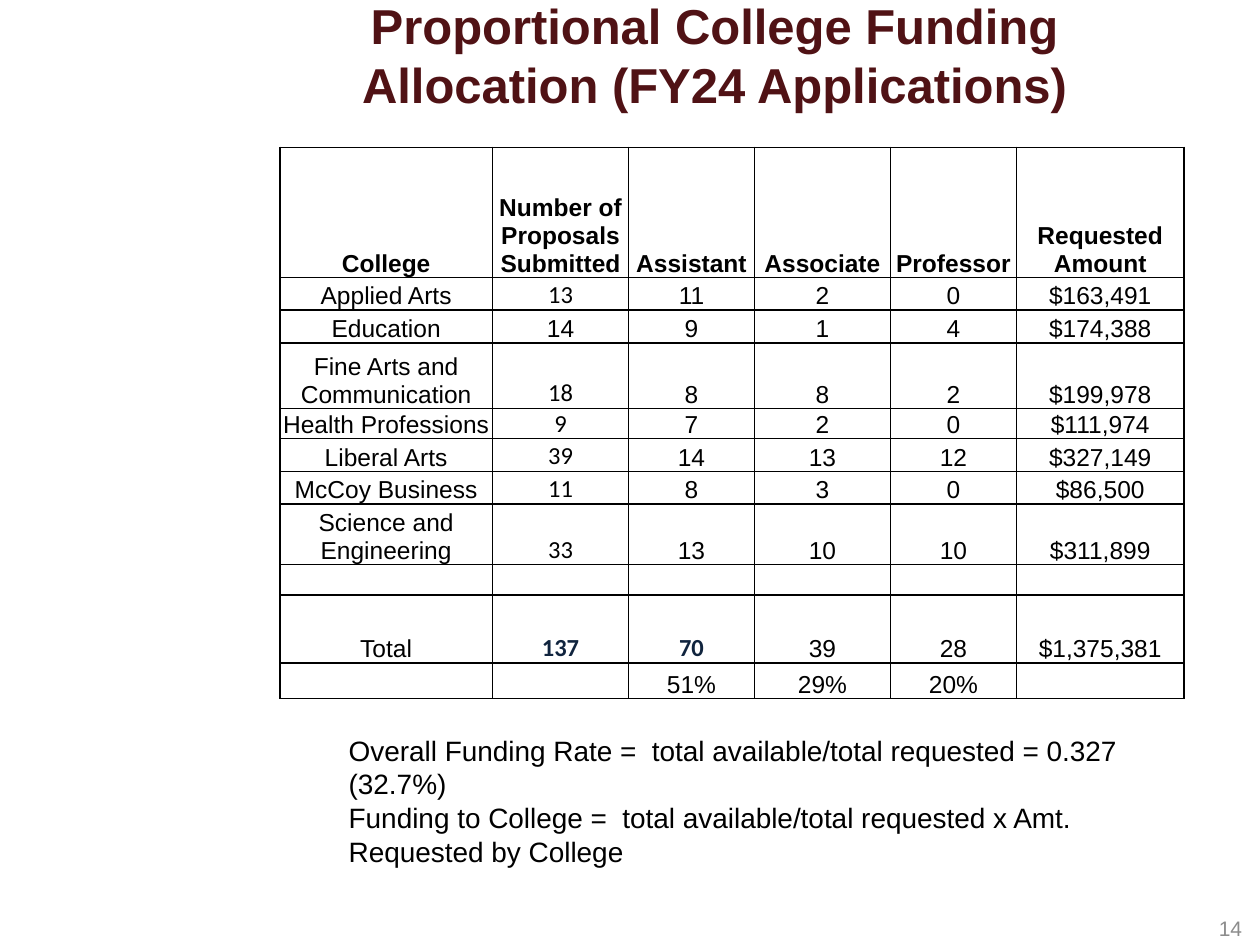
from dataclasses import dataclass

from lxml.etree import SubElement
from pptx import Presentation
from pptx.dml.color import RGBColor
from pptx.enum.text import MSO_ANCHOR as Anchor, PP_ALIGN as Align
from pptx.oxml.ns import qn
from pptx.util import Cm, Pt

BLACK, MAROON, GREY, NAVY = "000000", "501215", "8C8C8C", "10243E"


@dataclass(frozen=True)
class Style:
    size: float
    color: str = BLACK
    bold: bool = False
    name: str = "Arial"


@dataclass(frozen=True)
class TextBlock:
    """Text with its frame in centimetres."""
    text: str
    left: float
    top: float
    width: float
    height: float
    style: Style
    align: Align
    anchor: Anchor


BODY = Style(14)
HEADER = Style(14, bold=True)
COUNT = Style(14, name="Calibri")
TOTAL = Style(14, NAVY, True, "Calibri")

BLOCKS = [
    TextBlock("Proportional College Funding Allocation (FY24 Applications)",
              4.88, 0.05, 19.05, 2.11, Style(28, MAROON, True), Align.CENTER, Anchor.MIDDLE),
    TextBlock("14", 21.79, 18.21, 3.5, 1.02, Style(12, GREY), Align.RIGHT, Anchor.MIDDLE),
    TextBlock("Overall Funding Rate =  total available/total requested = 0.327 (32.7%)\n"
              "Funding to College =  total available/total requested x Amt. Requested by College",
              6.78, 14.66, 17.58, 3, Style(16), Align.LEFT, Anchor.TOP),
]

COLUMN_WIDTHS = [4.29, 2.74, 2.54, 2.74, 2.54, 3.38]
ROWS = [
    (2.62, ["College", "Number of Proposals Submitted", "Assistant", "Associate", "Professor",
            "Requested Amount"]),
    (0.66, ["Applied Arts", "13", "11", "2", "0", "$163,491"]),
    (0.66, ["Education", "14", "9", "1", "4", "$174,388"]),
    (1.32, ["Fine Arts and Communication", "18", "8", "8", "2", "$199,978"]),
    (0.61, ["Health Professions", "9", "7", "2", "0", "$111,974"]),
    (0.66, ["Liberal Arts", "39", "14", "13", "12", "$327,149"]),
    (0.66, ["McCoy Business", "11", "8", "3", "0", "$86,500"]),
    (1.22, ["Science and Engineering", "33", "13", "10", "10", "$311,899"]),
    (0.61, [""] * 6),
    (1.37, ["Total", "137", "70", "39", "28", "$1,375,381"]),
    (0.71, ["", "", "51%", "29%", "20%", ""]),
]


def rgb(color: str) -> RGBColor:
    return RGBColor.from_string(color)


def format_text(frame, style: Style, align: Align) -> None:
    for para in frame.paragraphs:
        para.alignment = align
        for span in para.runs:
            font = span.font
            font.name, font.size, font.bold = style.name, Pt(style.size), style.bold
            font.color.rgb = rgb(style.color)
        if not para.runs:
            SubElement(para._p, qn("a:endParaRPr"), sz=str(int(style.size * 100)))


def add_text(page, block: TextBlock) -> None:
    box = page.shapes.add_textbox(Cm(block.left), Cm(block.top), Cm(block.width), Cm(block.height))
    frame = box.text_frame
    frame.word_wrap = True
    frame.vertical_anchor = block.anchor
    frame.text = block.text
    format_text(frame, block.style, block.align)


def cell_style(row: int, column: int, text: str) -> Style:
    if row == 0:
        return HEADER
    if ROWS[row][1][0] == "Total" and column in (1, 2):
        return TOTAL
    if column == 1 and ROWS[row][1][0] != "Education":
        return COUNT if text else BODY
    return BODY


def border_cell(cell) -> None:
    """Draw one-point black lines on all four sides, under a clear fill."""
    properties = cell._tc.get_or_add_tcPr()
    for side in ("a:lnL", "a:lnR", "a:lnT", "a:lnB"):
        line = SubElement(properties, qn(side), w=str(Pt(1)))
        fill = SubElement(line, qn("a:solidFill"))
        SubElement(fill, qn("a:srgbClr"), val=BLACK)
    cell.fill.background()


def add_funding_table(page) -> None:
    heights = [height for height, _ in ROWS]
    table = page.shapes.add_table(len(ROWS), len(COLUMN_WIDTHS), Cm(5.64), Cm(2.97),
                                  Cm(sum(COLUMN_WIDTHS)), Cm(sum(heights))).table
    table.first_row = table.horz_banding = False
    for column, width in zip(table.columns, COLUMN_WIDTHS):
        column.width = Cm(width)
    for row, (height, texts) in enumerate(ROWS):
        table.rows[row].height = Cm(height)
        for column, text in enumerate(texts):
            cell = table.cell(row, column)
            cell.margin_left = cell.margin_right = cell.margin_top = Cm(0.02)
            cell.margin_bottom = 0
            cell.vertical_anchor = Anchor.BOTTOM
            border_cell(cell)
            cell.text_frame.text = text
            format_text(cell.text_frame, cell_style(row, column, text), Align.CENTER)


def main() -> None:
    deck = Presentation()
    deck.slide_width, deck.slide_height = Cm(25.4), Cm(19.05)
    page = deck.slides.add_slide(deck.slide_layouts[6])
    for block in BLOCKS:
        add_text(page, block)
    add_funding_table(page)
    deck.save("out.pptx")


if __name__ == "__main__":
    main()
